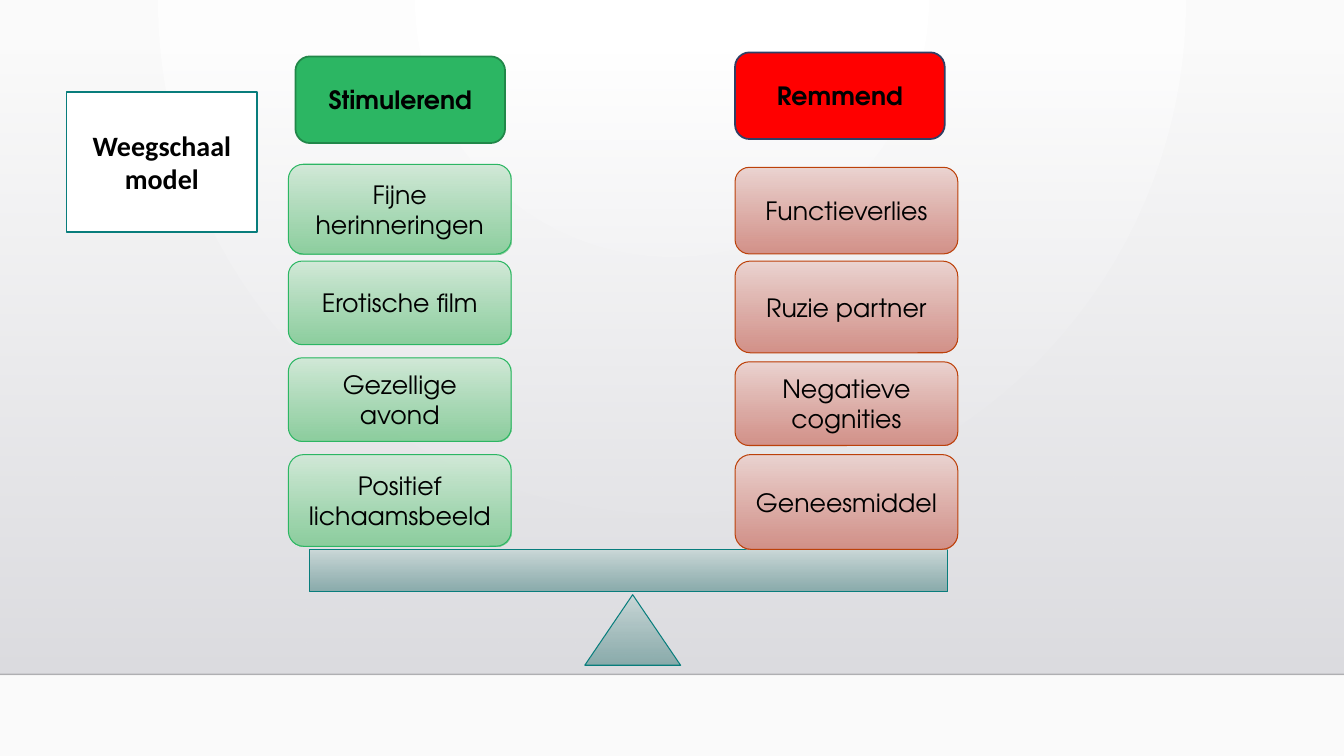
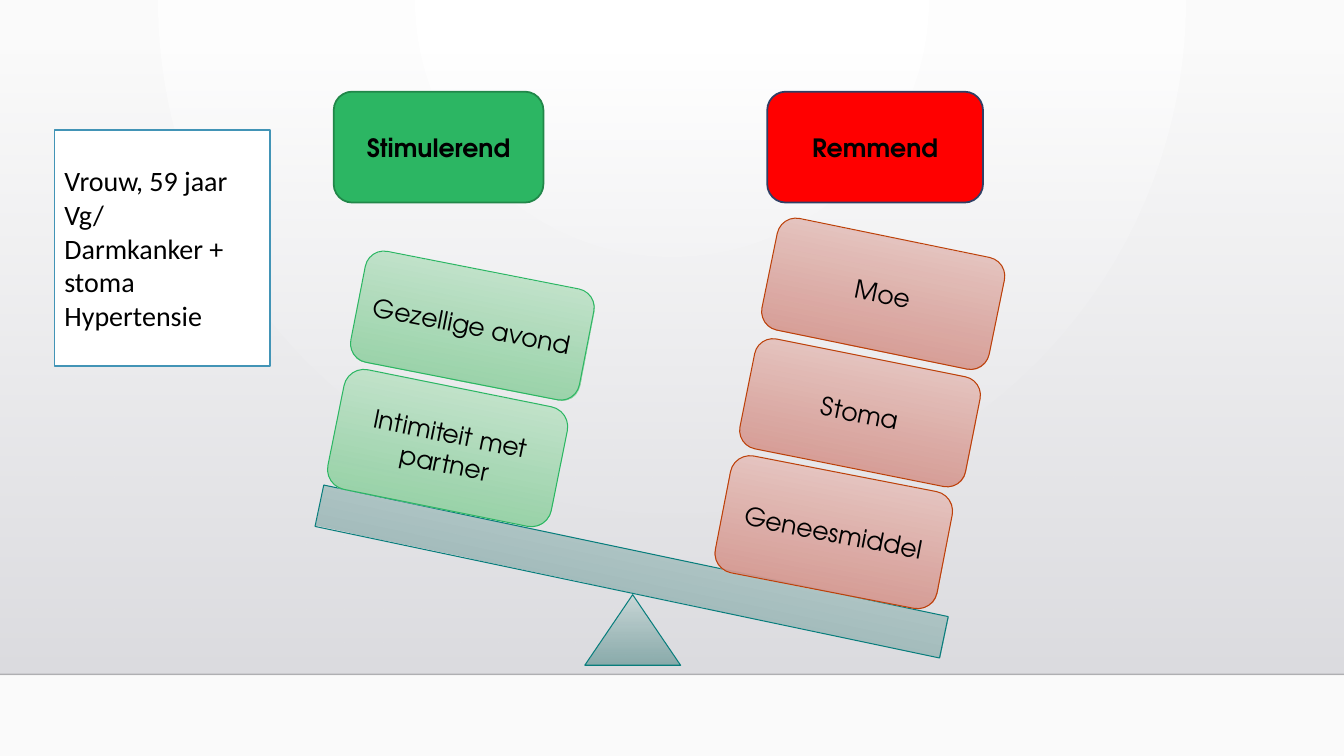
from lxml import etree
from pptx import Presentation
from pptx.dml.color import RGBColor
from pptx.enum.shapes import MSO_CONNECTOR, MSO_SHAPE
from pptx.enum.text import MSO_ANCHOR, PP_ALIGN
from pptx.oxml.ns import qn
from pptx.util import Inches, Pt

RECTANGLE = MSO_SHAPE.RECTANGLE
ROUNDED = MSO_SHAPE.ROUNDED_RECTANGLE
TRIANGLE = MSO_SHAPE.ISOSCELES_TRIANGLE
STRAIGHT = MSO_CONNECTOR.STRAIGHT
MIDDLE = MSO_ANCHOR.MIDDLE
CENTER, LEFT = PP_ALIGN.CENTER, PP_ALIGN.LEFT

WIDTH, HEIGHT = 13.33, 7.5
FLOOR_TOP = 6.69
COLORS = {
    "black": "000000", "white": "FFFFFF", "backdrop": "FAFAFA",
    "band top": "DCDCE0", "band bottom": "DEDEE2", "floor": "000001",
    "teal": "087D7C", "teal light": "CBD8D8", "teal dark": "83A7A7",
    "green": "2CB663", "green edge": "218749",
    "green light": "D2E9D8", "green dark": "85CC98",
    "red": "FF0000", "red edge": "303F65", "rust": "BC410A",
    "rust light": "EBD4D1", "rust dark": "D18A81", "blue": "4294B6",
}
# Gradient stops are (colour, opacity in percent).
SCALE_FILL = (("teal light", 100), ("teal dark", 92))
BLOCK_STYLES = {
    "stimulating": {"fill": (("green light", 100), ("green dark", 92)), "line": "green"},
    "inhibiting": {"fill": (("rust light", 100), ("rust dark", 92)), "line": "rust"},
}
HEADER_STYLES = {
    "Stimulerend": {"fill": "green", "line": "green edge"},
    "Remmend": {"fill": "red", "line": "red edge"},
}
LABEL_FONT = {"name": "TeX Gyre Adventor", "size": Pt(18), "bold": False}
HEADER_FONT = {**LABEL_FONT, "bold": True}
NOTE_FONT = {"name": "Calibri", "size": Pt(20), "bold": False}


def color(name):
    return RGBColor.from_string(COLORS[name])


def set_opacity(properties, percents):
    """Give each RGB colour below an XML element its opacity."""
    for rgb, percent in zip(properties.iter(qn("a:srgbClr")), percents):
        if percent < 100:
            etree.SubElement(rgb, qn("a:alpha"), val=str(percent * 1000))


def set_gradient(fill, names):
    fill.gradient()
    for position, (stop, name) in enumerate(zip(fill.gradient_stops, names)):
        stop.position = position
        stop.color.rgb = color(name)


class ScaleDeck:
    """Presentation style together with the slide being drawn."""

    def __init__(self):
        self.presentation = Presentation()
        self.presentation.slide_width = Inches(WIDTH)
        self.presentation.slide_height = Inches(HEIGHT)
        self.slide = None
        self.set_background()

    def set_background(self):
        """Put a circular gradient on the master."""
        master = self.presentation.slide_master
        set_gradient(master.background.fill, ("white", "backdrop"))
        gradient = master.element.find(".//" + qn("a:gradFill"))
        gradient.remove(gradient.find(qn("a:lin")))
        circle = etree.SubElement(gradient, qn("a:path"), path="circle")
        etree.SubElement(circle, qn("a:fillToRect"),
                         l="43000", t="0", r="43000", b="100000")

    def new_slide(self):
        self.slide = self.presentation.slides.add_slide(
            self.presentation.slide_layouts[6])
        self.shape(RECTANGLE, (0, 0.51, WIDTH, 6.18),
                   (("band top", 0), ("band bottom", 100)))
        floor = self.slide.shapes.add_connector(
            STRAIGHT, Inches(0), Inches(FLOOR_TOP), Inches(WIDTH), Inches(FLOOR_TOP))
        floor.line.color.rgb = color("floor")
        floor.line.width = Pt(1)
        properties = floor.element.spPr
        set_opacity(properties, (20,))
        etree.SubElement(properties, qn("a:effectLst"))

    def shape(self, kind, box, fill, line=None, width=0.75, rotation=0):
        """Draw a shape filled with a colour name or with gradient stops."""
        shape = self.slide.shapes.add_shape(kind, *(Inches(value) for value in box))
        shape.shadow.inherit = False
        shape.rotation = rotation
        if isinstance(fill, str):
            shape.fill.solid()
            shape.fill.fore_color.rgb = color(fill)
        else:
            names, percents = zip(*fill)
            set_gradient(shape.fill, names)
            shape.fill.gradient_angle = 270
            set_opacity(shape.element.spPr, percents)
        if line:
            shape.line.color.rgb = color(line)
            shape.line.width = Pt(width)
        else:
            shape.line.fill.background()
        return shape

    def label(self, shape, lines, font, alignment=CENTER):
        frame = shape.text_frame
        frame.word_wrap = True
        frame.vertical_anchor = MIDDLE
        frame.text = "\n".join(lines)
        for paragraph in frame.paragraphs:
            paragraph.alignment = alignment
            for attribute, value in font.items():
                setattr(paragraph.font, attribute, value)
            paragraph.font.color.rgb = color("black")

    def header(self, text, box):
        shape = self.shape(ROUNDED, box, width=1.25, **HEADER_STYLES[text])
        self.label(shape, [text], HEADER_FONT)

    def block(self, side, text, box, rotation=0):
        shape = self.shape(ROUNDED, box, rotation=rotation, **BLOCK_STYLES[side])
        self.label(shape, [text], LABEL_FONT)

    def note(self, lines, box, line, bold=False, alignment=CENTER):
        shape = self.shape(RECTANGLE, box, "white", line, 1.25)
        self.label(shape, lines, {**NOTE_FONT, "bold": bold}, alignment)

    def scale(self, left, top, rotation=0):
        """Draw the pivot and the beam resting on it."""
        self.shape(TRIANGLE, (5.8, 5.9, 0.95, 0.7), SCALE_FILL, "teal")
        self.shape(RECTANGLE, (left, top, 6.33, 0.42), SCALE_FILL, "teal",
                   rotation=rotation)


def balanced_slide(deck):
    deck.new_slide()
    deck.scale(3.07, 5.45)
    deck.header("Stimulerend", (2.93, 0.56, 2.08, 0.86))
    deck.header("Remmend", (7.29, 0.52, 2.08, 0.86))
    columns = {
        "stimulating": (2.86, (
            ("Fijne herinneringen", 1.63, 0.89), ("Erotische film", 2.59, 0.83),
            ("Gezellige avond", 3.55, 0.83), ("Positief lichaamsbeeld", 4.51, 0.91))),
        "inhibiting": (7.29, (
            ("Functieverlies", 1.66, 0.86), ("Ruzie partner", 2.59, 0.91),
            ("Negatieve cognities", 3.59, 0.83), ("Geneesmiddel", 4.51, 0.94))),
    }
    for side, (left, blocks) in columns.items():
        for text, top, height in blocks:
            deck.block(side, text, (left, top, 2.21, height))
    deck.note(["Weegschaal model"], (0.66, 0.91, 1.89, 1.39), "teal", bold=True)


def tilted_slide(deck):
    deck.new_slide()
    deck.scale(3.1, 5.46, 11.9)
    deck.header("Stimulerend", (3.31, 0.91, 2.08, 1.1))
    deck.header("Remmend", (7.61, 0.91, 2.14, 1.1))
    blocks = (
        ("stimulating", "Gezellige avond", (3.53, 2.67, 2.31, 1.12), 11.1),
        ("stimulating", "Intimiteit met partner", (3.31, 3.84, 2.26, 1.21), 11.4),
        ("inhibiting", "Geneesmiddel", (7.15, 4.69, 2.24, 1.18), 11),
        ("inhibiting", "Stoma", (7.39, 3.54, 2.28, 1.11), 11.3),
        ("inhibiting", "Moe", (7.61, 2.35, 2.3, 1.13), 11.6),
    )
    for block in blocks:
        deck.block(*block)
    deck.note(["Vrouw, 59 jaar", "Vg/", "Darmkanker + stoma", "Hypertensie"],
              (0.54, 1.29, 2.14, 2.34), "blue", alignment=LEFT)


def main():
    deck = ScaleDeck()
    balanced_slide(deck)
    tilted_slide(deck)
    deck.presentation.save("out.pptx")


if __name__ == "__main__":
    main()
